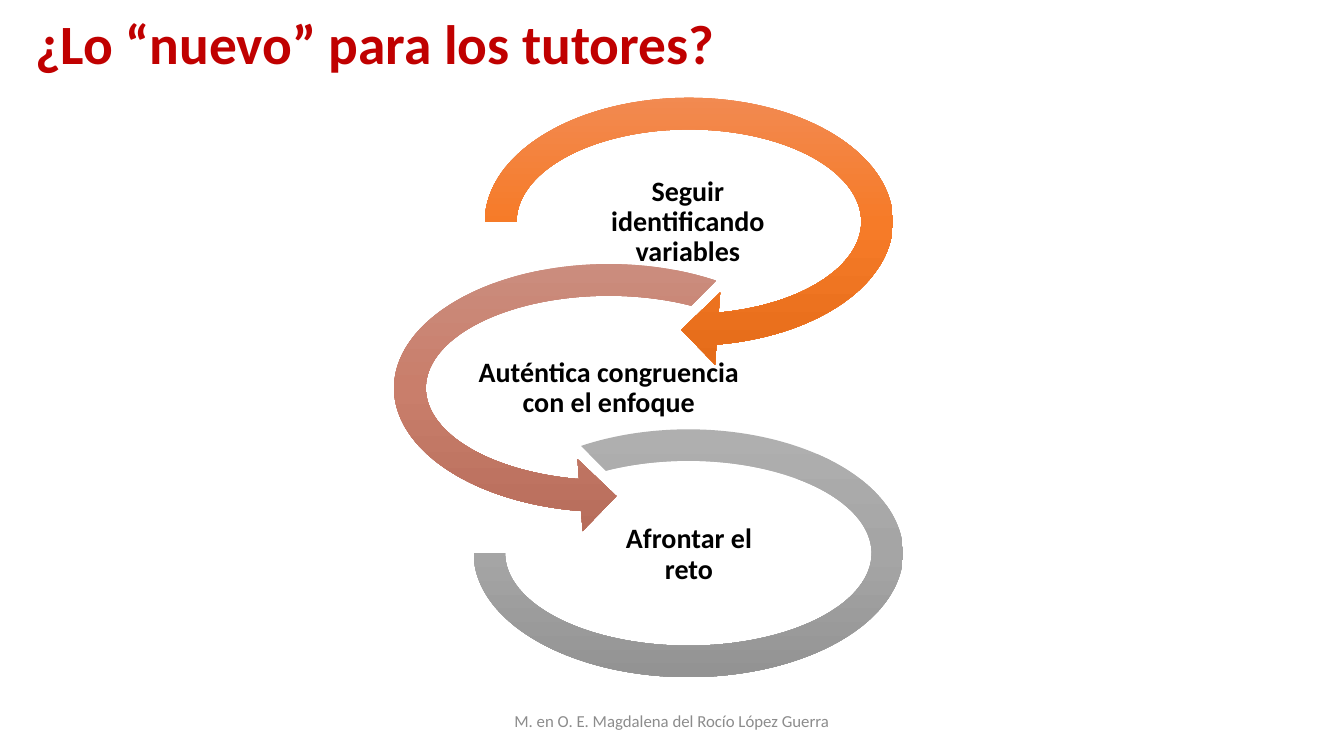
from copy import deepcopy
from dataclasses import dataclass

from pptx import Presentation
from pptx.dml.color import RGBColor as RGB
from pptx.enum.shapes import MSO_SHAPE as Kind
from pptx.enum.text import MSO_ANCHOR as Anchor, PP_ALIGN as Align
from pptx.util import Pt


@dataclass(frozen=True)
class Theme:
    font: str = "Calibri"
    title: str = "C00000"
    ink: str = "000000"
    foot: str = "8C8C8C"
    orange: tuple = ("F18C57", "F67B28", "E56C19")
    clay: tuple = ("CB8F81", "C97E6B", "B76D5B")
    gray: tuple = ("AFAFAF", "A5A5A5", "939393")
    big: float = 39.6
    mid: float = 20
    small: float = 12


THEME = Theme()
STEP = 118.8  # vertical distance between loops

# kind, adjustments, colours, box offset in its row, label, label offset and width
LOOPS = [
    (Kind.CIRCULAR_ARROW, (0.11, 11.423, 45, 108, 0.125), THEME.orange,
     (64.8, 0, 320.4, 206), "Seguir identificando variables", 167, 114.5),
    (Kind.LEFT_CIRCULAR_ARROW, (0.11, 11.423, 63, 189, 0.125), THEME.clay,
     (0, 0, 335.5, 206), "Auténtica congruencia con el enfoque", 72.7, 190),
    (Kind.BLOCK_ARC, (135, 108, 0.127), THEME.gray,
     (71.3, 13.7, 306.7, 177), "Afrontar el reto", 167.8, 114.5),
]


def write(slide, box, text, size, color, bold=True, align=Align.CENTER, inset=None, space=0.9):
    frame = slide.shapes.add_textbox(*map(Pt, box)).text_frame
    frame.word_wrap = True
    frame.vertical_anchor = Anchor.MIDDLE
    if inset is not None:
        frame.margin_left = frame.margin_right = Pt(inset)
        frame.margin_top = frame.margin_bottom = Pt(inset)
    para = frame.paragraphs[0]
    para.text = text
    para.alignment = align
    para.line_spacing = space
    font = para.font
    font.name, font.size, font.bold = THEME.font, Pt(size), bold
    font.color.rgb = RGB.from_string(color)


def shade(shape, colors):
    """Fill from top to bottom with three evenly spaced colours."""
    fill = shape.fill
    fill.gradient()
    fill.gradient_angle = 270
    last = shape.element.spPr.findall(".//{*}gs")[-1]
    last.addnext(deepcopy(last))
    for i, (stop, color) in enumerate(zip(fill.gradient_stops, colors)):
        stop.position = i / 2
        stop.color.rgb = RGB.from_string(color)


def draw_loop(slide, left, top, loop):
    kind, adjust, colors, (dx, dy, wide, high), text, indent, span = loop
    shape = slide.shapes.add_shape(kind, Pt(left + dx), Pt(top + dy), Pt(wide), Pt(high))
    for i, value in enumerate(adjust):
        shape.adjustments[i] = value
    shape.shadow.inherit = False
    shape.line.fill.background()
    shade(shape, colors)
    write(slide, (left + indent, top + 74.9, span, 56.9), text, THEME.mid, THEME.ink, inset=0.9)


def draw_chain(slide, left, top):
    for row, loop in enumerate(LOOPS):
        draw_loop(slide, left, top + row * STEP, loop)


def main():
    deck = Presentation()
    deck.slide_width, deck.slide_height = Pt(960), Pt(540)
    slide = deck.slides.add_slide(deck.slide_layouts[6])
    write(slide, (18, 17.3, 537, 32.4), "¿Lo “nuevo” para los tutores?",
          THEME.big, THEME.title, align=Align.LEFT)
    write(slide, (318, 500.5, 324, 28.8), "M. en O. E. Magdalena del Rocío López Guerra",
          THEME.small, THEME.foot, bold=False, space=1)
    draw_chain(slide, 267.1, 55.4)
    deck.save("out.pptx")


if __name__ == "__main__":
    main()
